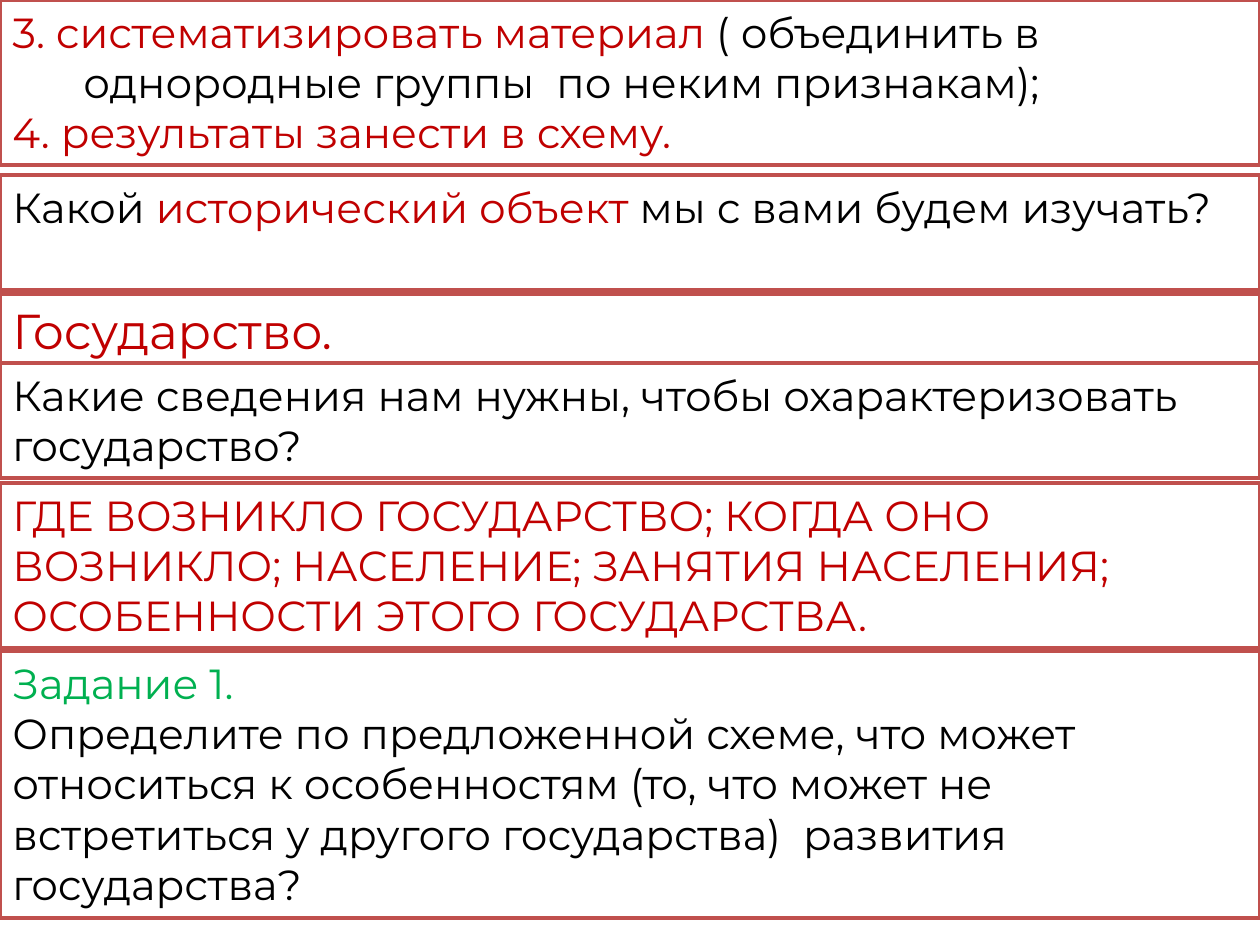
import pptx
import pptx.util
import pptx.dml.color
import pptx.enum.shapes
import pptx.enum.text

RGB = pptx.dml.color.RGBColor
BLACK = RGB(0x00, 0x00, 0x00)
WHITE = RGB(0xFF, 0xFF, 0xFF)
RED = RGB(0xC0, 0x00, 0x00)
GREEN = RGB(0x00, 0xB0, 0x50)
BORDER = RGB(0xC0, 0x50, 0x4D)

WIDE, HIGH = 1260, 945
SCALE = 914400 // 126
FONT = "Montserrat"
HANG = 71


def px(num):
    return pptx.util.Emu(num * SCALE)


def add_text(para, text, color=BLACK, size=24):
    run = para.add_run()
    run.text = text
    run.font.name = FONT
    run.font.size = pptx.util.Pt(size)
    run.font.color.rgb = color


def add_panel(slide, top, high, paras, size=24, hang=0):
    """Draw a full-width bordered box; each paragraph is a list of (text, color)."""
    kind = pptx.enum.shapes.MSO_SHAPE.RECTANGLE
    box = slide.shapes.add_shape(kind, px(0), px(top), px(WIDE), px(high))
    box.shadow.inherit = False
    box.fill.solid()
    box.fill.fore_color.rgb = WHITE
    box.line.color.rgb = BORDER
    box.line.width = pptx.util.Pt(2)
    frame = box.text_frame
    frame.word_wrap = True
    frame.auto_size = pptx.enum.text.MSO_AUTO_SIZE.SHAPE_TO_FIT_TEXT
    frame.vertical_anchor = pptx.enum.text.MSO_ANCHOR.TOP
    for num, runs in enumerate(paras):
        para = frame.add_paragraph() if num else frame.paragraphs[0]
        para.alignment = pptx.enum.text.PP_ALIGN.LEFT
        if hang:
            props = para._p.get_or_add_pPr()
            props.set("marL", str(px(hang)))
            props.set("indent", str(px(-hang)))
        for text, color in runs:
            add_text(para, text, color=color, size=size)


def add_steps(slide, top, high):
    add_panel(slide, top, high, [
        [("3. систематизировать материал ", RED),
         ("( объединить в однородные группы  по неким признакам);", BLACK)],
        [("4. результаты занести в схему.", RED)],
    ], hang=HANG)


def add_task(slide, top, high):
    add_panel(slide, top, high, [
        [("Задание 1.", GREEN)],
        [("Определите по предложенной схеме, что может относиться к "
          "особенностям (то, что может не встретиться у другого "
          "государства)  развития государства?", BLACK)],
    ])


def add_topic(slide, top, high):
    add_panel(slide, top, high, [
        [("Какой ", BLACK), ("исторический объект ", RED),
         ("мы с вами будем изучать?", BLACK)],
    ])


def add_reply(slide, top, high):
    add_panel(slide, top, high, [[("Государство.", RED)]], size=28)


def add_query(slide, top, high):
    add_panel(slide, top, high, [
        [("Какие сведения нам нужны, чтобы охарактеризовать государство?", BLACK)],
    ])


def add_facts(slide, top, high):
    add_panel(slide, top, high, [
        [("ГДЕ ВОЗНИКЛО ГОСУДАРСТВО; КОГДА ОНО ВОЗНИКЛО; НАСЕЛЕНИЕ; "
          "ЗАНЯТИЯ НАСЕЛЕНИЯ; ОСОБЕННОСТИ ЭТОГО ГОСУДАРСТВА.", RED)],
    ])


def main():
    deck = pptx.Presentation()
    deck.slide_width, deck.slide_height = px(WIDE), px(HIGH)
    slide = deck.slides.add_slide(deck.slide_layouts[6])
    add_steps(slide, 0, 165)
    add_task(slide, 651, 267)
    add_topic(slide, 175, 115)
    add_reply(slide, 294, 72)
    add_query(slide, 363, 115)
    add_facts(slide, 483, 165)
    deck.save("out.pptx")


if __name__ == "__main__":
    main()
